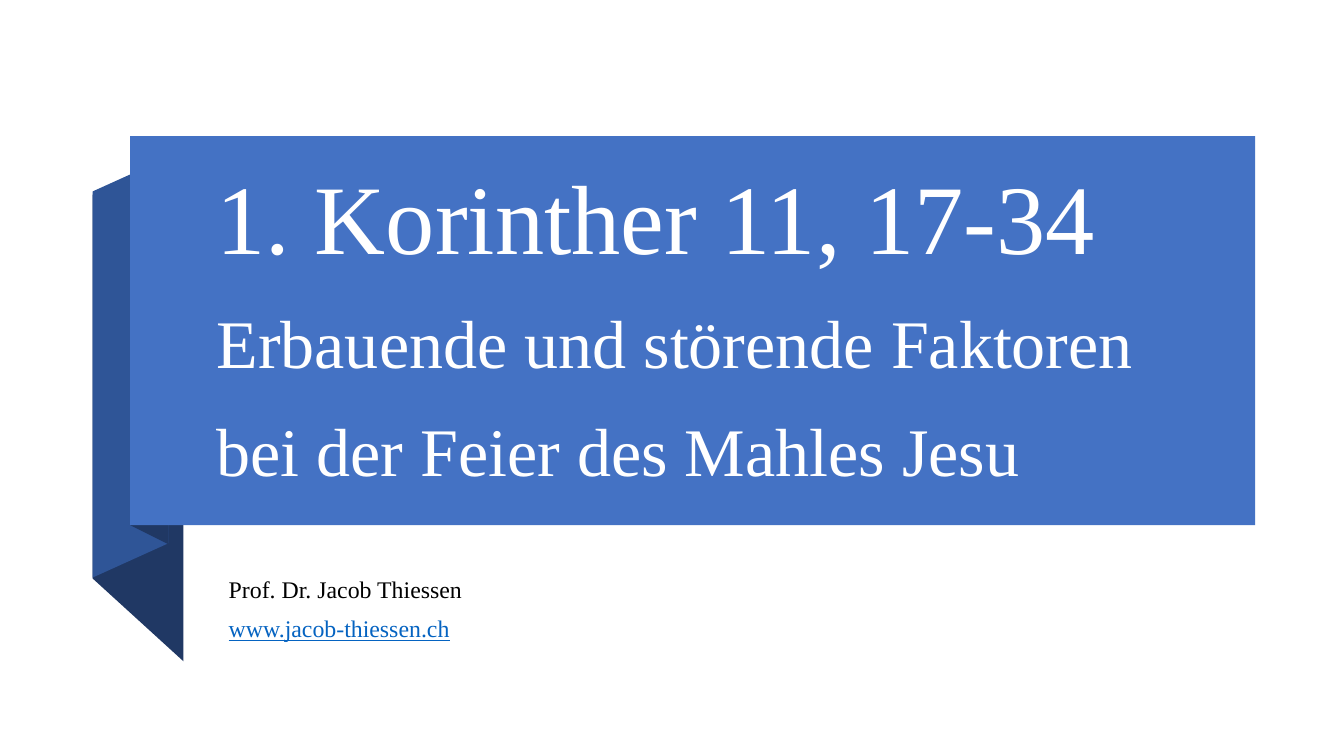
from pptx import Presentation, util as u
from pptx.dml.color import RGBColor
from pptx.enum import shapes, text

HUES = {"band": "4472C4", "fold": "2F5597", "dark": "203864",
        "white": "FFFFFF", "black": "000000", "link": "0563C1"}


class Deck:
    """Style and current slide; lengths are percent of the slide's size."""

    face = "Times New Roman"

    def __init__(self, wide, high):
        self.prs = Presentation()
        self.prs.slide_width = u.Inches(wide)
        self.prs.slide_height = u.Inches(high)
        self.slide = self.prs.slides.add_slide(self.prs.slide_layouts[6])

    def spot(self, x, y):
        return (round(self.prs.slide_width * x / 100),
                round(self.prs.slide_height * y / 100))

    def paint(self, shape, hue):
        shape.shadow.inherit = False
        shape.fill.solid()
        shape.fill.fore_color.rgb = RGBColor.from_string(HUES[hue])
        shape.line.fill.background()

    def poly(self, points, hue):
        first, *rest = [self.spot(*p) for p in points]
        pen = self.slide.shapes.build_freeform(*first, scale=1.0)
        pen.add_line_segments(rest, close=True)
        self.paint(pen.convert_to_shape(), hue)

    def rect(self, x, y, w, h, hue):
        kind = shapes.MSO_SHAPE.RECTANGLE
        box = self.slide.shapes.add_shape(kind, *self.spot(x, y), *self.spot(w, h))
        self.paint(box, hue)

    def text(self, x, y, w, h, paras, anchor, form):
        """Each paragraph is a list of (words, size, hue, underline) lines."""
        box = self.slide.shapes.add_textbox(*self.spot(x, y), *self.spot(w, h))
        frame = box.text_frame
        frame.word_wrap = True
        frame.vertical_anchor = anchor
        for i, lines in enumerate(paras):
            para = frame.add_paragraph() if i else frame.paragraphs[0]
            for key, val in form.items():
                if i or key != "space_before":
                    setattr(para, key, val)
            for j, (words, size, hue, under) in enumerate(lines):
                if j:
                    para.add_line_break()
                run = para.add_run()
                run.text = words
                style = {"name": self.face, "size": u.Pt(size), "underline": under}
                for key, val in style.items():
                    setattr(run.font, key, val)
                run.font.color.rgb = RGBColor.from_string(HUES[hue])


def main():
    deck = Deck(13.33, 7.5)

    # Folded ribbon, back to front
    left, edge, bend, tail = 6.9, 9.68, 12.53, 13.65
    deck.poly([(left, 76.53), (tail, 87.47), (tail, 36.8), (left, 25.73)], "dark")
    deck.poly([(left, 76.4), (bend, 71.87), (bend, 20.8), (left, 25.33)], "fold")
    deck.poly([(edge, 69.47), (bend, 72), (bend, 20.67), (edge, 18.13)], "dark")
    deck.rect(edge, 18, 83.72, 51.47, "band")

    # Title
    title = [("1. Korinther 11, 17-34", 70.2, "white", False),
             ("Erbauende und störende Faktoren bei der Feier des Mahles Jesu",
              48.6, "white", False)]
    deck.text(15.38, 20.8, 75.77, 44.67, [title], text.MSO_ANCHOR.BOTTOM,
              {"line_spacing": u.Pt(77)})

    # Speaker
    lines = [[("Prof. Dr. Jacob Thiessen", 17, "black", False)],
             [("www.jacob-thiessen.ch", 17, "link", True)]]
    deck.text(16.28, 75.73, 73.89, 10.13, lines, text.MSO_ANCHOR.TOP,
              {"line_spacing": 0.9, "space_before": u.Pt(10)})

    deck.prs.save("out.pptx")


if __name__ == "__main__":
    main()
